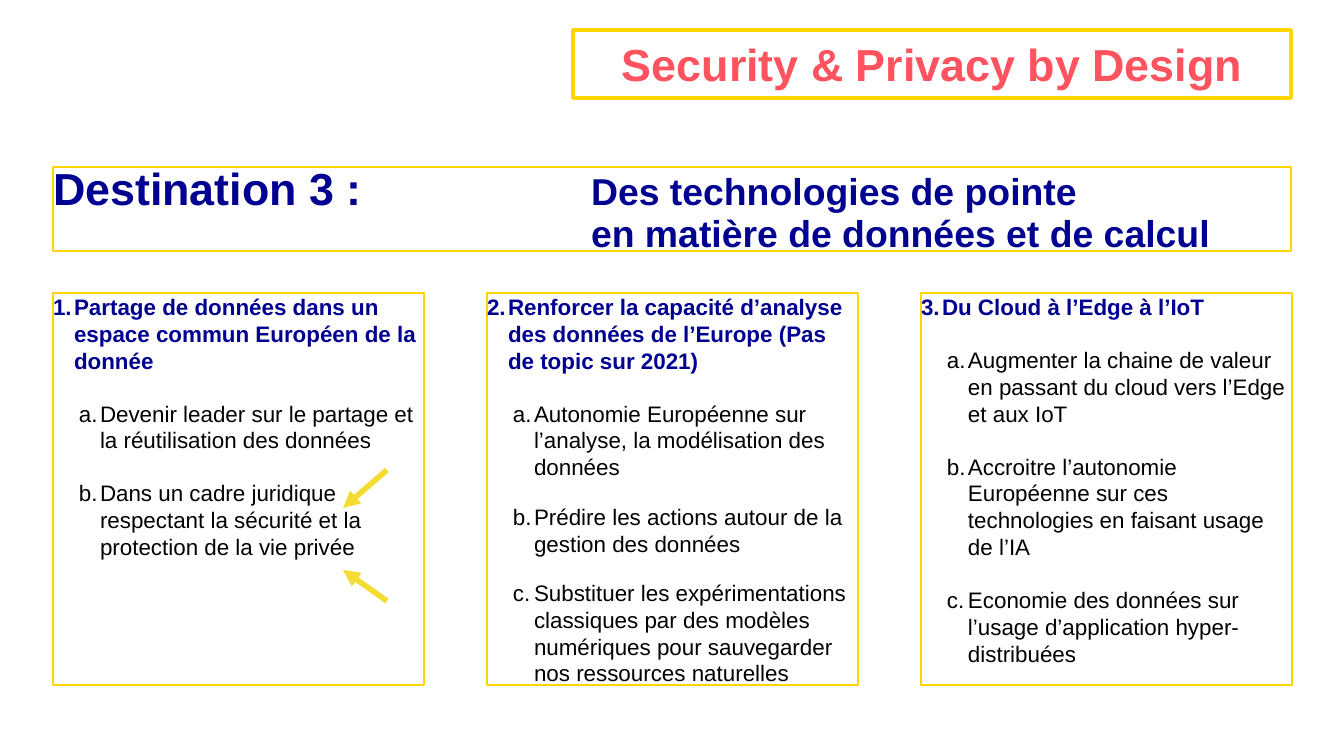
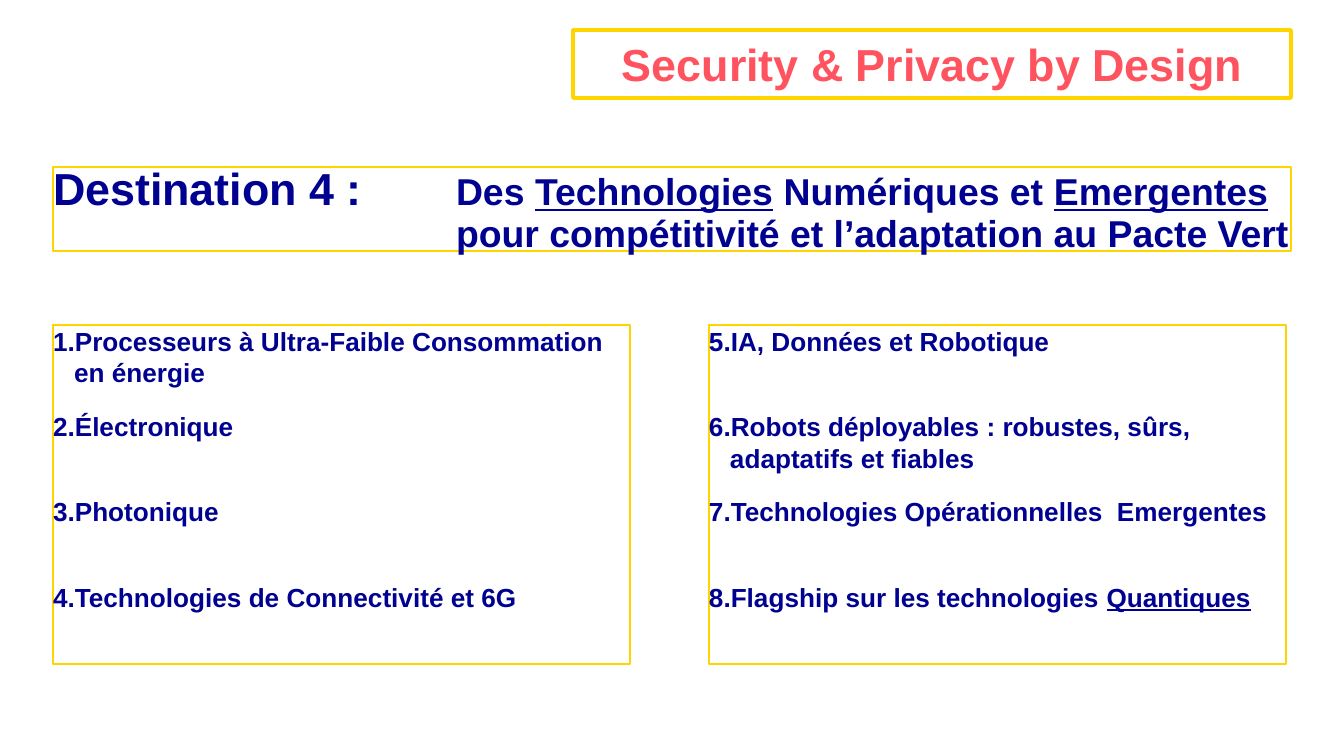
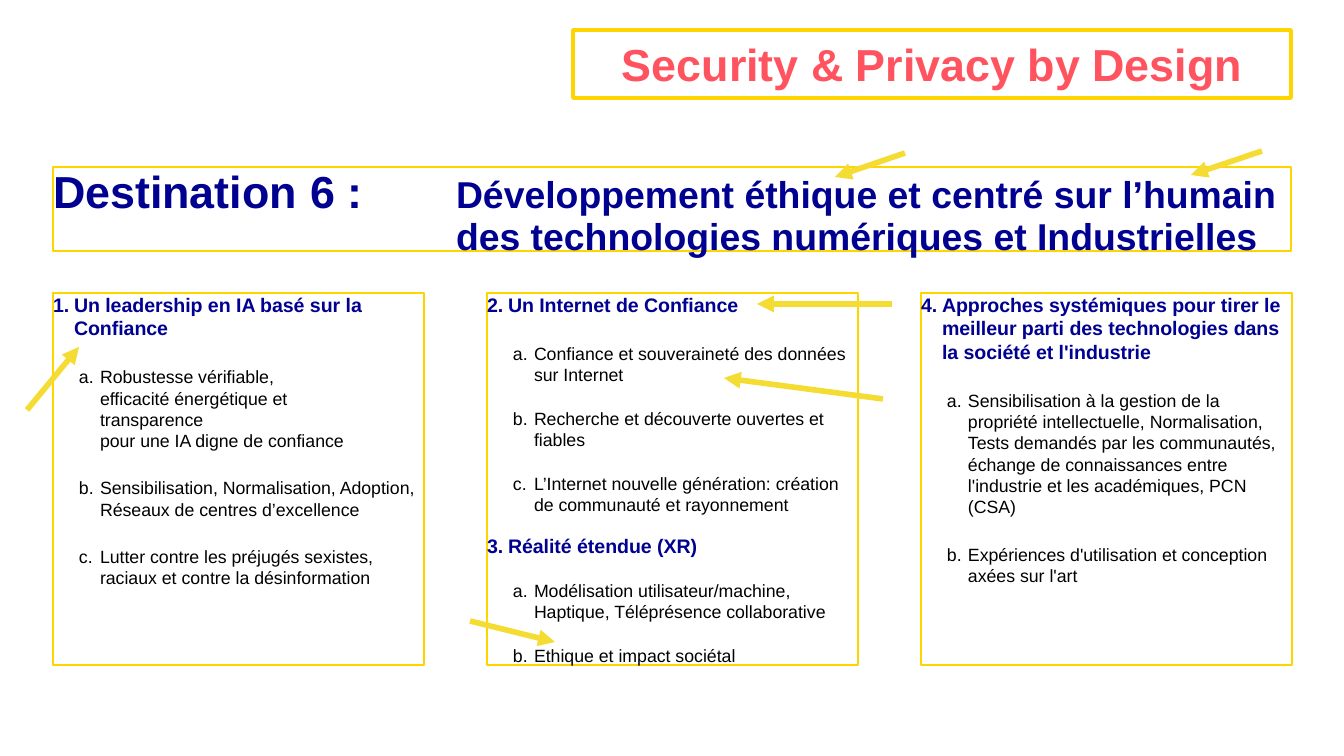
from copy import deepcopy
from dataclasses import dataclass

from pptx import Presentation
from pptx.dml.color import RGBColor
from pptx.enum.dml import MSO_LINE
from pptx.enum.shapes import MSO_CONNECTOR
from pptx.enum.text import MSO_AUTO_SIZE, PP_ALIGN
from pptx.oxml.ns import qn
from pptx.oxml.xmlchemy import OxmlElement as new_element
from pptx.util import Emu, Pt

# Shared style
NAVY = RGBColor(0x00, 0x00, 0x91)
BLACK = RGBColor(0x00, 0x00, 0x00)
WHITE = RGBColor(0xFF, 0xFF, 0xFF)
CORAL = RGBColor(0xFF, 0x54, 0x5F)
GOLD = RGBColor(0xFF, 0xD5, 0x00)
ARROW_YELLOW = RGBColor(0xF5, 0xDC, 0x32)
FONT = "Arial"
BANNER_TEXT = "Security & Privacy by Design"
EMU_PER_PX = 914400 / 134.4

# Layout in px
SLIDE_WIDTH, SLIDE_HEIGHT = 1344, 756
MARGIN = 53
HANGING = 21
POINT_INDENT = 47
THREE_COLUMNS = (434, 371)
TWO_COLUMNS = (656, 577)


@dataclass(frozen=True)
class Box:
    left: int
    top: int
    width: int
    height: int


@dataclass(frozen=True)
class Segment:
    text: str
    size: float = 20
    underline: bool = False


@dataclass(frozen=True)
class Item:
    text: str
    is_heading: bool = False
    after: float = 8
    underlined_end: str = ""


@dataclass(frozen=True)
class Column:
    start: int
    items: tuple[Item, ...]


@dataclass(frozen=True)
class Arrow:
    x1: int
    y1: int
    x2: int
    y2: int


@dataclass(frozen=True)
class Destination:
    title: tuple[Segment, ...]
    title_tab: int
    columns: tuple[Column, ...]
    grid: tuple[int, int]
    top: int
    height: int
    heading_size: float
    point_size: float
    arrows: tuple[Arrow, ...] = ()


BANNER = Box(573, 30, 718, 68)
TITLE = Box(MARGIN, 167, 1238, 84)


def px(length: float) -> Emu:
    return Emu(round(length * EMU_PER_PX))


def heading(text: str, after: float = 8, underlined_end: str = "") -> Item:
    return Item(text, True, after, underlined_end)


def points(*texts: str, after: float = 8) -> tuple[Item, ...]:
    return tuple(Item(text, after=after) for text in texts)


# Drawing
def add_box(slide, box: Box, line_width: float, inset: bool = False):
    shape = slide.shapes.add_textbox(px(box.left), px(box.top), px(box.width), px(box.height))
    shape.line.color.rgb = GOLD
    shape.line.width = Pt(line_width)
    text_frame = shape.text_frame
    text_frame.word_wrap = True
    if not inset:
        text_frame.margin_left = text_frame.margin_right = 0
        text_frame.margin_top = text_frame.margin_bottom = 0
    return shape


def format_run(run, size: float, color: RGBColor, bold: bool = True, underline: bool = False) -> None:
    font = run.font
    font.name, font.size, font.bold = FONT, Pt(size), bold
    font.color.rgb = color
    if underline:
        font.underline = True


def match_breaks(paragraph) -> None:
    """Give line breaks the style of the run before them."""
    for line_break in paragraph._p.findall(qn("a:br")):
        line_break.append(deepcopy(line_break.getprevious().find(qn("a:rPr"))))


def add_banner(slide) -> None:
    shape = add_box(slide, BANNER, 2, inset=True)
    shape.fill.solid()
    shape.fill.fore_color.rgb = WHITE
    text_frame = shape.text_frame
    text_frame.auto_size = MSO_AUTO_SIZE.SHAPE_TO_FIT_TEXT
    text_frame.text = BANNER_TEXT
    paragraph = text_frame.paragraphs[0]
    paragraph.alignment = PP_ALIGN.CENTER
    format_run(paragraph.runs[0], 24, CORAL)


def add_title(slide, segments: tuple[Segment, ...], tab_position: int) -> None:
    paragraph = add_box(slide, TITLE, 0.75).text_frame.paragraphs[0]
    tab_list, tab = new_element("a:tabLst"), new_element("a:tab")
    tab.set("pos", str(px(tab_position)))
    tab.set("algn", "l")
    tab_list.append(tab)
    paragraph._p.get_or_add_pPr().append(tab_list)
    paragraph.line_spacing = 0.9
    for segment in segments:
        for index, text in enumerate(segment.text.split("\v")):
            if index:
                paragraph.add_line_break()
            if text:
                run = paragraph.add_run()
                run.text = text
                format_run(run, segment.size, NAVY, underline=segment.underline)
    match_breaks(paragraph)


def number_paragraph(paragraph, is_heading: bool, start: int) -> None:
    properties = paragraph._p.get_or_add_pPr()
    properties.set("marL", str(px(HANGING if is_heading else POINT_INDENT)))
    properties.set("indent", str(-px(HANGING)))
    number = new_element("a:buAutoNum")
    number.set("type", "arabicPeriod" if is_heading else "alphaLcPeriod")
    if is_heading and start > 1:
        number.set("startAt", str(start))
    properties.append(number)


def add_column(slide, box: Box, column: Column, heading_size: float, point_size: float) -> None:
    text_frame = add_box(slide, box, 0.75).text_frame
    for index, item in enumerate(column.items):
        paragraph = text_frame.add_paragraph() if index else text_frame.paragraphs[0]
        paragraph.text = item.text
        paragraph.level = 0 if item.is_heading else 1
        number_paragraph(paragraph, item.is_heading, column.start)
        if index:
            paragraph.space_before = Pt(4 if item.is_heading else 6)
        paragraph.space_after = Pt(item.after)
        if item.underlined_end:
            paragraph.add_run().text = item.underlined_end
        size, color = (heading_size, NAVY) if item.is_heading else (point_size, BLACK)
        for run in paragraph.runs:
            format_run(run, size, color, item.is_heading, run.text == item.underlined_end)
        match_breaks(paragraph)


def add_arrow(slide, arrow: Arrow) -> None:
    connector = slide.shapes.add_connector(
        MSO_CONNECTOR.STRAIGHT, px(arrow.x1), px(arrow.y1), px(arrow.x2), px(arrow.y2))
    line = connector.line
    line.color.rgb = ARROW_YELLOW
    line.width = Pt(3)
    line.dash_style = MSO_LINE.SOLID
    tail = new_element("a:tailEnd")
    tail.set("type", "triangle")
    line._get_or_add_ln().append(tail)
    connector._element.spPr.append(new_element("a:effectLst"))


def add_destination(presentation, destination: Destination) -> None:
    slide = presentation.slides.add_slide(presentation.slide_layouts[6])
    add_title(slide, destination.title, destination.title_tab)
    step, width = destination.grid
    for index, column in enumerate(destination.columns):
        box = Box(MARGIN + index * step, destination.top, width, destination.height)
        add_column(slide, box, column, destination.heading_size, destination.point_size)
    add_banner(slide)
    for arrow in destination.arrows:
        add_arrow(slide, arrow)


# Content
SINGLE_LINE = 25  # space after a one-line topic, so that rows stay level

DATA = Destination(
    title=(
        Segment("Destination 3 :\t", 24),
        Segment("Des technologies de pointe\v\ten matière de données et de calcul"),
    ),
    title_tab=538,
    columns=(
        Column(1, (
            heading("Partage de données dans un espace commun Européen de la donnée"),
            *points(
                "Devenir leader sur le partage et la réutilisation des données",
                "Dans un cadre juridique respectant la sécurité et la protection de la vie privée",
            ),
        )),
        Column(2, (
            heading("Renforcer la capacité d’analyse des données de l’Europe (Pas de topic sur 2021)"),
            *points(
                "Autonomie Européenne sur l’analyse, la modélisation des données",
                "Prédire les actions autour de la gestion des données",
                "Substituer les expérimentations classiques par des modèles numériques "
                "pour sauvegarder nos ressources naturelles",
                after=6,
            ),
        )),
        Column(3, (
            heading("Du Cloud à l’Edge à l’IoT"),
            *points(
                "Augmenter la chaine de valeur en passant du cloud vers l’Edge et aux IoT",
                "Accroitre l’autonomie Européenne sur ces technologies en faisant usage de l’IA",
                "Economie des données sur l’usage d’application hyper-distribuées",
            ),
        )),
    ),
    grid=THREE_COLUMNS, top=293, height=392, heading_size=12, point_size=12,
    arrows=(Arrow(387, 470, 343, 508), Arrow(387, 601, 343, 570)),
)

DIGITAL = Destination(
    title=(
        Segment("Destination 4 :\t", 24),
        Segment("Des "),
        Segment("Technologies", underline=True),
        Segment(" Numériques et "),
        Segment("Emergentes", underline=True),
        Segment("\v\tpour compétitivité et l’adaptation au Pacte Vert"),
    ),
    title_tab=403,
    columns=(
        Column(1, (
            heading("Processeurs à Ultra-Faible Consommation en énergie"),
            heading("Électronique", SINGLE_LINE),
            heading("Photonique", SINGLE_LINE),
            heading("Technologies de Connectivité et 6G"),
        )),
        Column(5, (
            heading("IA, Données et Robotique", SINGLE_LINE),
            heading("Robots déployables : robustes, sûrs, adaptatifs et fiables"),
            heading("Technologies Opérationnelles  Emergentes", SINGLE_LINE),
            heading("Flagship sur les technologies ", underlined_end="Quantiques"),
        )),
    ),
    grid=TWO_COLUMNS, top=325, height=339, heading_size=14, point_size=14,
)

HUMAN = Destination(
    title=(
        Segment("Destination", 24),
        Segment(" ", 25.5),
        Segment("6 :\t", 24),
        Segment("Développement éthique et centré sur l’humain"
                "\v\tdes technologies numériques et Industrielles"),
    ),
    title_tab=403,
    columns=(
        Column(1, (
            heading("Un leadership en IA basé sur la Confiance"),
            *points(
                "Robustesse vérifiable,\vefficacité énergétique et\vtransparence\v"
                "pour une IA digne de confiance",
                "Sensibilisation, Normalisation, Adoption, Réseaux de centres d’excellence",
                "Lutter contre les préjugés sexistes, raciaux et contre la désinformation",
            ),
        )),
        Column(2, (
            heading("Un Internet de Confiance"),
            *points(
                "Confiance et souveraineté des données sur Internet",
                "Recherche et découverte ouvertes et fiables",
                "L’Internet nouvelle génération: création de communauté et rayonnement",
                after=6,
            ),
            heading("Réalité étendue (XR)", 6),
            *points(
                "Modélisation utilisateur/machine, Haptique, Téléprésence collaborative",
                "Ethique et impact sociétal",
                after=6,
            ),
        )),
        Column(4, (
            heading("Approches systémiques pour tirer le meilleur parti des technologies "
                    "dans la société et l'industrie"),
            *points(
                "Sensibilisation à la gestion de la propriété intellectuelle, Normalisation, "
                "Tests demandés par les communautés, échange de connaissances entre "
                "l'industrie et les académiques, PCN (CSA)",
                "Expériences d'utilisation et conception axées sur l'art",
            ),
        )),
    ),
    grid=THREE_COLUMNS, top=293, height=372, heading_size=10.5, point_size=9.5,
    arrows=(
        Arrow(27, 410, 79, 347), Arrow(470, 621, 555, 642),
        Arrow(905, 153, 835, 177), Arrow(1262, 151, 1191, 175),
        Arrow(892, 304, 757, 304), Arrow(883, 399, 724, 378),
    ),
)


def main() -> None:
    presentation = Presentation()
    presentation.slide_width, presentation.slide_height = px(SLIDE_WIDTH), px(SLIDE_HEIGHT)
    for destination in (DATA, DIGITAL, HUMAN):
        add_destination(presentation, destination)
    presentation.save("out.pptx")


if __name__ == "__main__":
    main()
